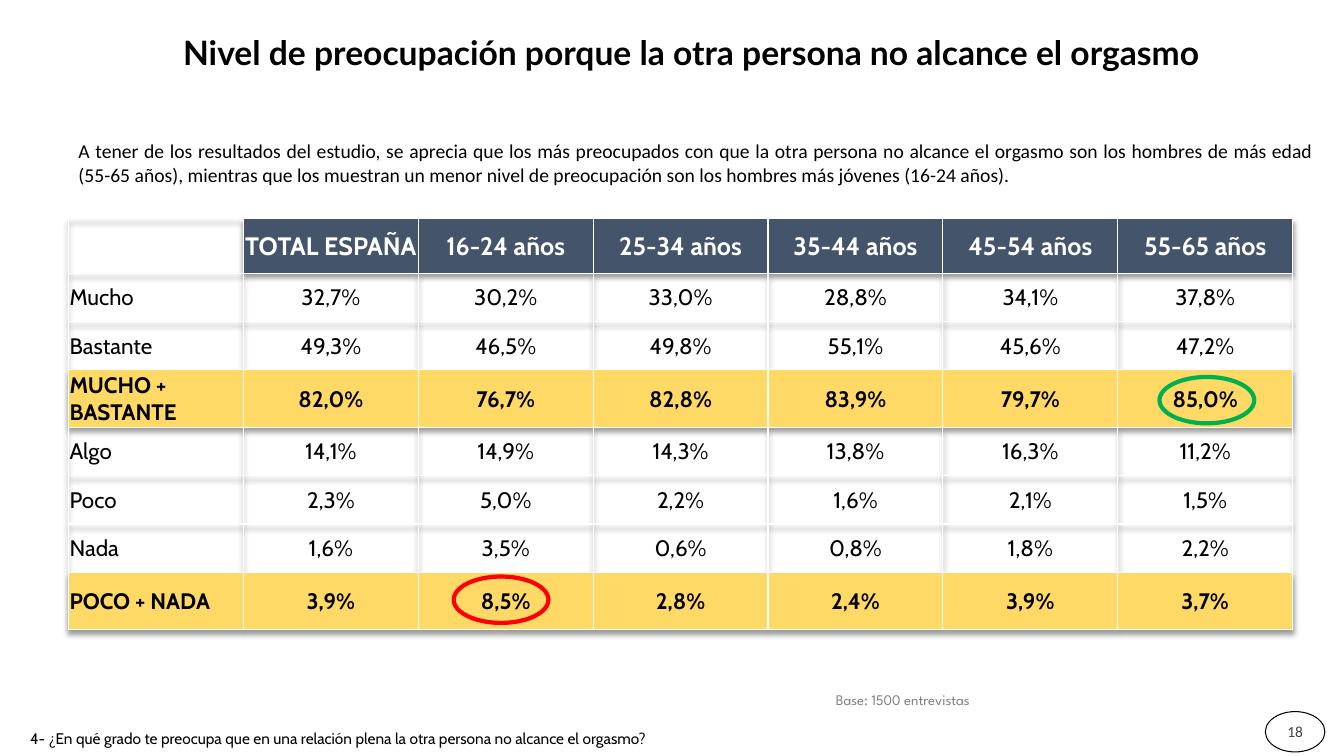
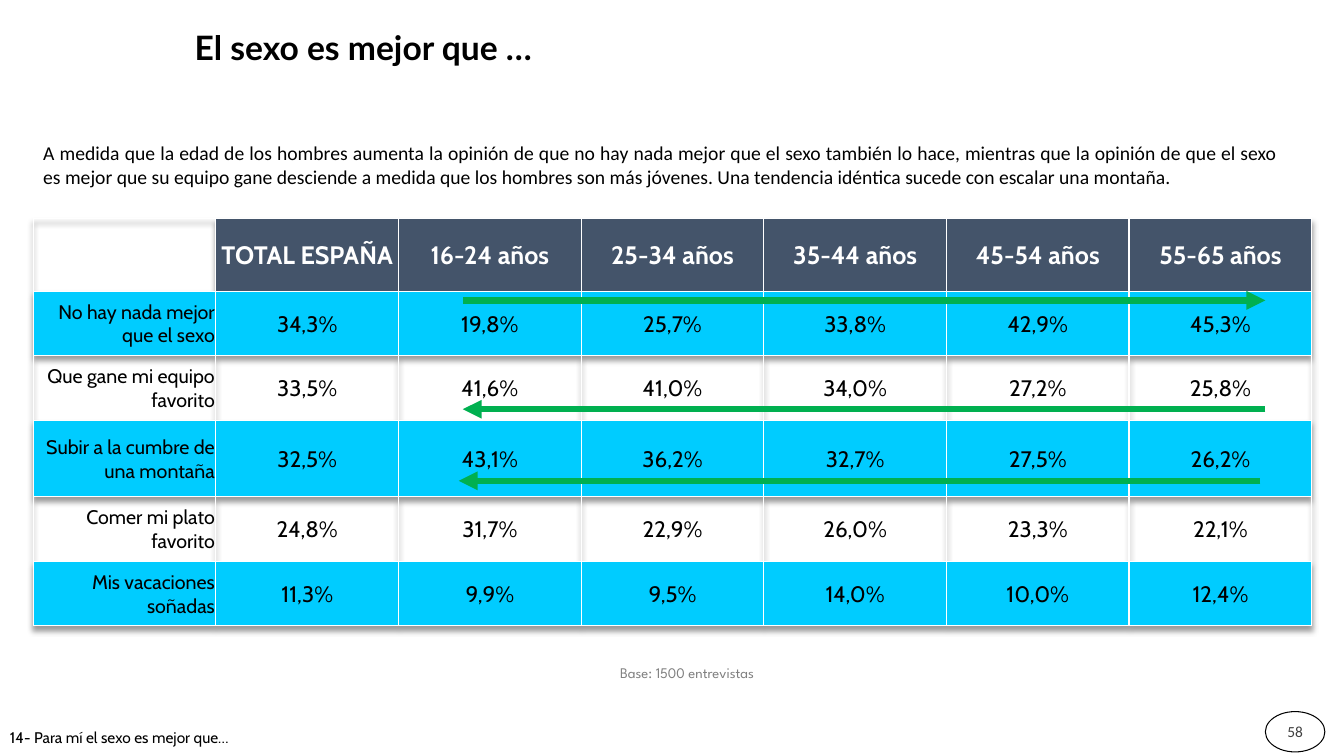
from lxml import etree
from pptx import Presentation
from pptx.dml.color import RGBColor
from pptx.enum.shapes import MSO_CONNECTOR, MSO_SHAPE
from pptx.enum.text import MSO_ANCHOR, PP_ALIGN
from pptx.oxml import parse_xml
from pptx.oxml.ns import nsdecls, qn
from pptx.util import Inches, Pt

LEFT, CENTER, RIGHT = PP_ALIGN.LEFT, PP_ALIGN.CENTER, PP_ALIGN.RIGHT
JUSTIFY = PP_ALIGN.JUSTIFY
MIDDLE = MSO_ANCHOR.MIDDLE
OVAL = MSO_SHAPE.OVAL
STRAIGHT = MSO_CONNECTOR.STRAIGHT

WHITE = RGBColor(0xFF, 0xFF, 0xFF)
BLACK = RGBColor(0x00, 0x00, 0x00)
DARK_GRAY = RGBColor(0x40, 0x40, 0x40)
GRAY = RGBColor(0x80, 0x80, 0x80)
NAVY = RGBColor(0x44, 0x54, 0x6A)
YELLOW = RGBColor(0xFF, 0xD9, 0x66)
CYAN = RGBColor(0x00, 0xCC, 0xFF)
GREEN = RGBColor(0x00, 0xB0, 0x50)
RED = RGBColor(0xFF, 0x00, 0x00)

NO_TABLE_STYLE = "{2D5ABB26-0587-4C30-8999-92F81FD0307C}"
TABLE_SHADOW = (
    f'<a:effectLst {nsdecls("a")}><a:outerShdw blurRad="50800" dist="38100" dir="5400000" '
    'algn="t" rotWithShape="0"><a:srgbClr val="000000"><a:alpha val="40000"/></a:srgbClr>'
    "</a:outerShdw></a:effectLst>"
)
HEADERS = ["", "TOTAL ESPAÑA", "16-24 años", "25-34 años", "35-44 años", "45-54 años", "55-65 años"]

SLIDES = [
    {
        "title": "Nivel de preocupación porque la otra persona no alcance el orgasmo",
        "title_box": (1.08, 0.21, 11.55, 0.61),
        "title_alignment": CENTER,
        "number": "18",
        "base_box": (7.88, 6.8, 2.15, 0.28),
        "summary": "A tener de los resultados del estudio, se aprecia que los más preocupados con que "
        "la otra persona no alcance el orgasmo son los hombres de más edad (55-65 años), mientras "
        "que los muestran un menor nivel de preocupación son los hombres más jóvenes (16-24 años).",
        "summary_box": (0.68, 1.33, 12.45, 0.57),
        "question": "4- ¿En qué grado te preocupa que en una relación plena la otra persona "
        "no alcance el orgasmo?",
        "question_box": (0.2, 7.18, 7.05, 0.29),
        "table_box": (0.68, 2.17, 12.14, 4.07),
        "row_heights": [0.54, 0.48, 0.48, 0.57, 0.48, 0.48, 0.48, 0.57],
        "label_size": 16,
        "label_alignment": LEFT,
        "band_rows": (3, 7),
        "band_color": YELLOW,
        "band_bold": True,
        "rows": [
            ["Mucho", "32,7%", "30,2%", "33,0%", "28,8%", "34,1%", "37,8%"],
            ["Bastante", "49,3%", "46,5%", "49,8%", "55,1%", "45,6%", "47,2%"],
            ["MUCHO + BASTANTE", "82,0%", "76,7%", "82,8%", "83,9%", "79,7%", "85,0%"],
            ["Algo", "14,1%", "14,9%", "14,3%", "13,8%", "16,3%", "11,2%"],
            ["Poco", "2,3%", "5,0%", "2,2%", "1,6%", "2,1%", "1,5%"],
            ["Nada", "1,6%", "3,5%", "0,6%", "0,8%", "1,8%", "2,2%"],
            ["POCO + NADA", "3,9%", "8,5%", "2,8%", "2,4%", "3,9%", "3,7%"],
        ],
        "rings": [(11.5, 3.74, GREEN), (4.5, 5.72, RED)],
        "arrows": [],
    },
    {
        "title": "El sexo es mejor que …",
        "title_box": (1.83, 0.16, 8.26, 0.61),
        "title_alignment": LEFT,
        "number": "58",
        "base_box": (5.74, 6.54, 2.15, 0.28),
        "summary": "A medida que la edad de los hombres aumenta la opinión de que no hay nada mejor "
        "que el sexo también lo hace, mientras que la opinión de que el sexo es mejor que su equipo "
        "gane desciende a medida que los hombres son más jóvenes. Una tendencia idéntica sucede con "
        "escalar una montaña.",
        "summary_box": (0.33, 1.35, 12.45, 0.57),
        "question": "14- Para mí el sexo es mejor que…",
        "question_box": (0, 7.17, 7.32, 0.29),
        "table_box": (0.33, 2.17, 12.68, 4.02),
        "row_heights": [0.72, 0.64, 0.64, 0.76, 0.64, 0.64],
        "label_size": 14,
        "label_alignment": RIGHT,
        "band_rows": (1, 3, 5),
        "band_color": CYAN,
        "band_bold": False,
        "rows": [
            ["No hay nada mejor que el sexo", "34,3%", "19,8%", "25,7%", "33,8%", "42,9%", "45,3%"],
            ["Que gane mi equipo favorito", "33,5%", "41,6%", "41,0%", "34,0%", "27,2%", "25,8%"],
            ["Subir a la cumbre de una montaña", "32,5%", "43,1%", "36,2%", "32,7%", "27,5%", "26,2%"],
            ["Comer mi plato favorito", "24,8%", "31,7%", "22,9%", "26,0%", "23,3%", "22,1%"],
            ["Mis vacaciones soñadas", "11,3%", "9,9%", "9,5%", "14,0%", "10,0%", "12,4%"],
        ],
        "rings": [],
        "arrows": [(4.59, 12.55, 2.98), (12.55, 4.59, 4.06), (12.5, 4.55, 4.77)],
    },
]


def write(text_frame, text, font="Cabin", size=11, color=BLACK, bold=False, alignment=LEFT):
    text_frame.word_wrap = True
    paragraph = text_frame.paragraphs[0]
    paragraph.alignment = alignment
    run = paragraph.add_run()
    run.text = text
    run.font.name = font
    run.font.size = Pt(size)
    run.font.color.rgb = color
    run.font.bold = bold


def add_borders(cell):
    properties = cell._tc.get_or_add_tcPr()
    for side in ("lnL", "lnR", "lnT", "lnB"):
        line = etree.SubElement(properties, qn(f"a:{side}"), w=str(Pt(1)))
        fill = etree.SubElement(line, qn("a:solidFill"))
        etree.SubElement(fill, qn("a:srgbClr"), val=str(WHITE))


presentation = Presentation()
presentation.slide_width = Inches(13.33)
presentation.slide_height = Inches(7.5)

for content in SLIDES:
    slide = presentation.slides.add_slide(presentation.slide_layouts[5])
    shapes = slide.shapes

    title = shapes.title
    title.left, title.top, title.width, title.height = map(Inches, content["title_box"])
    title.text_frame.vertical_anchor = MIDDLE
    write(title.text_frame, content["title"], font="Lato", size=24, bold=True,
          alignment=content["title_alignment"])

    badge = shapes.add_shape(OVAL, Inches(12.55), Inches(7.06), Inches(0.59), Inches(0.4))
    badge.shadow.inherit = False
    badge.fill.solid()
    badge.fill.fore_color.rgb = WHITE
    badge_color = badge._element.spPr.find(qn("a:solidFill"))[0]
    etree.SubElement(badge_color, qn("a:alpha"), val="70000")
    badge.line.color.rgb = BLACK
    badge.line.width = Pt(0.75)
    badge.text_frame.margin_left = badge.text_frame.margin_right = Inches(0.02)
    badge.text_frame.vertical_anchor = MIDDLE
    write(badge.text_frame, content["number"], font="Calibri", color=DARK_GRAY, alignment=CENTER)

    base = shapes.add_textbox(*map(Inches, content["base_box"]))
    write(base.text_frame, "Base: 1500 entrevistas", font="League Spartan", size=10.5,
          color=GRAY, alignment=CENTER)
    summary = shapes.add_textbox(*map(Inches, content["summary_box"]))
    write(summary.text_frame, content["summary"], font="Calibri", size=14, alignment=JUSTIFY)
    question = shapes.add_textbox(*map(Inches, content["question_box"]))
    write(question.text_frame, content["question"])

    rows = [HEADERS] + content["rows"]
    table_box = content["table_box"]
    table = shapes.add_table(len(rows), len(HEADERS), *map(Inches, table_box)).table
    table.horz_banding = False
    table_properties = table._tbl.tblPr
    table_properties.find(qn("a:tableStyleId")).text = NO_TABLE_STYLE
    table_properties.insert(0, parse_xml(TABLE_SHADOW))
    for column in table.columns:
        column.width = Inches(table_box[2] / len(HEADERS))

    for row_index, values in enumerate(rows):
        table.rows[row_index].height = Inches(content["row_heights"][row_index])
        is_header = row_index == 0
        is_band = row_index in content["band_rows"]
        for column_index, value in enumerate(values):
            cell = table.cell(row_index, column_index)
            add_borders(cell)
            cell.vertical_anchor = MIDDLE
            cell.margin_left = cell.margin_right = cell.margin_top = Inches(0.01)
            cell.margin_bottom = 0
            if value and (is_header or is_band):
                cell.fill.solid()
                cell.fill.fore_color.rgb = NAVY if is_header else content["band_color"]
            else:
                cell.fill.background()
            if not value:
                continue
            if is_header:
                write(cell.text_frame, value, size=18, color=WHITE, bold=True, alignment=CENTER)
            else:
                is_label = column_index == 0
                write(cell.text_frame, value,
                      size=content["label_size"] if is_label else 16,
                      bold=is_band and content["band_bold"],
                      alignment=content["label_alignment"] if is_label else CENTER)

    for left, top, color in content["rings"]:
        ring = shapes.add_shape(OVAL, Inches(left), Inches(top), Inches(0.94), Inches(0.46))
        ring.shadow.inherit = False
        ring.fill.background()
        ring.line.color.rgb = color
        ring.line.width = Pt(3)

    for start, end, height in content["arrows"]:
        arrow = shapes.add_connector(STRAIGHT, Inches(start), Inches(height), Inches(end), Inches(height))
        arrow.line.color.rgb = GREEN
        arrow.line.width = Pt(4.5)
        etree.SubElement(arrow.line._get_or_add_ln(), qn("a:tailEnd"), type="triangle")
        etree.SubElement(arrow._element.spPr, qn("a:effectLst"))

presentation.save("out.pptx")
